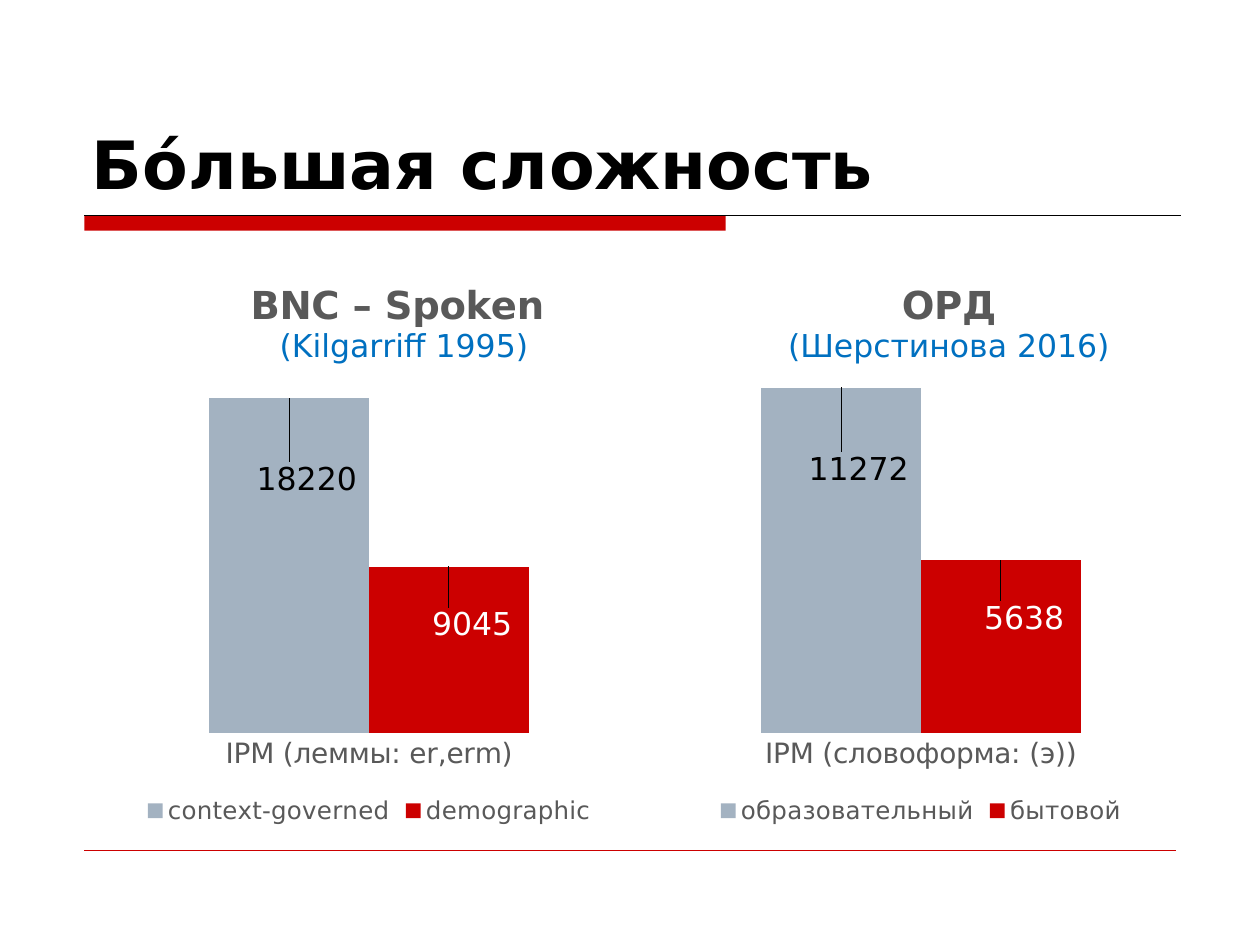
from lxml.etree import SubElement
from pptx import Presentation
from pptx.chart.data import CategoryChartData
from pptx.dml.color import RGBColor
from pptx.enum.chart import (XL_CHART_TYPE, XL_LABEL_POSITION,
                             XL_LEGEND_POSITION, XL_TICK_MARK)
from pptx.enum.shapes import MSO_CONNECTOR, MSO_SHAPE
from pptx.enum.text import MSO_ANCHOR, PP_ALIGN
from pptx.oxml import parse_xml
from pptx.oxml.ns import nsdecls, qn
from pptx.util import Inches, Pt

FONT = "DejaVu Sans"
RED, GREY_BLUE, GREY, BLUE = "CC0000", "A3B2C1", "595959", "0070C0"
BLACK, WHITE = "000000", "FFFFFF"


def color(hex_value):
    return RGBColor.from_string(hex_value)


def set_font(font, size, hex_value, bold=False):
    font.name = FONT
    font.size = Pt(size)
    font.bold = bold
    font.color.rgb = color(hex_value)


def set_layout(parent, index, **values):
    """Give a chart part a manual layout, in fractions of the chart."""
    for old in parent.findall(qn("c:layout")):
        parent.remove(old)
    settings = "".join(f'<c:{key} val="{value}"/>' for key, value in values.items())
    parent.insert(index, parse_xml(
        f'<c:layout {nsdecls("c")}><c:manualLayout>{settings}'
        "</c:manualLayout></c:layout>"))


def add_title(slide, text):
    title = slide.shapes.title
    title.left, title.top = Inches(0.63), Inches(0.33)
    title.width, title.height = Inches(8.75), Inches(1.33)
    frame = title.text_frame
    frame.text = text
    frame.vertical_anchor = MSO_ANCHOR.BOTTOM
    frame.paragraphs[0].alignment = PP_ALIGN.LEFT
    set_font(frame.paragraphs[0].runs[0].font, 38, BLACK, bold=True)


def add_rule(slide, y, right, width, hex_value):
    rule = slide.shapes.add_connector(
        MSO_CONNECTOR.STRAIGHT, Inches(0.67), Inches(y), Inches(right), Inches(y))
    rule.line.width = Pt(width)
    rule.line.color.rgb = color(hex_value)
    SubElement(rule._element.spPr, qn("a:effectLst"))


def add_accent_bar(slide):
    bar = slide.shapes.add_shape(
        MSO_SHAPE.RECTANGLE, Inches(0.67), Inches(1.71), Inches(5.09), Inches(0.12))
    bar.shadow.inherit = False
    bar.fill.solid()
    bar.fill.fore_color.rgb = color(RED)
    bar.line.fill.background()


def add_heading(chart, corpus, citation, x):
    frame = chart.chart_title.text_frame
    frame.text = f"{corpus}\n{citation}"
    heading, source = frame.paragraphs
    set_font(heading.runs[0].font, 22, GREY, bold=True)
    set_font(source.runs[0].font, 18, BLUE)
    chart.chart_title.include_in_layout = False
    set_layout(chart.chart_title._element, 1,
               xMode="edge", yMode="edge", x=x, y=0.06)


def style_series(series, fill, label_color, dx, dy):
    series.format.fill.solid()
    series.format.fill.fore_color.rgb = color(fill)
    label = series.points[0].data_label
    set_font(label.font, 18, label_color)
    label.position = XL_LABEL_POSITION.INSIDE_END
    set_layout(series._element.xpath(".//c:dLbl")[0], 1, x=dx, y=dy)


def style_axes(chart, maximum):
    values = chart.value_axis
    values.minimum_scale, values.maximum_scale = 0, maximum
    values.has_major_gridlines = False
    values.visible = False
    categories = chart.category_axis
    categories.major_tick_mark = XL_TICK_MARK.NONE
    categories.format.line.fill.background()
    set_font(categories.tick_labels.font, 16, GREY)


def add_corpus_chart(slide, left, corpus, citation, heading_x, category,
                     frequencies, maximum):
    data = CategoryChartData()
    data.categories = [category]
    for name, frequency in frequencies.items():
        data.add_series(name, [frequency])
    chart = slide.shapes.add_chart(
        XL_CHART_TYPE.COLUMN_CLUSTERED, Inches(left), Inches(1.92),
        Inches(4.62), Inches(4.67), data).chart
    set_font(chart.font, 10, BLACK)
    add_heading(chart, corpus, citation, heading_x)
    style_axes(chart, maximum)

    plot = chart.plots[0]
    plot.gap_width = 150
    plot.overlap = 0
    plot.vary_by_categories = False
    formal, everyday = plot.series
    style_series(formal, GREY_BLUE, BLACK, 0.03, 0.1)
    style_series(everyday, RED, WHITE, 0.04, 0.06)
    set_layout(chart._chartSpace.chart.plotArea, 0, layoutTarget="inner",
               xMode="edge", yMode="edge", x=0.02, y=0.21, w=0.96, h=0.625)

    chart.has_legend = True
    chart.legend.position = XL_LEGEND_POSITION.BOTTOM
    chart.legend.include_in_layout = False
    set_font(chart.legend.font, 14, GREY)


def main():
    presentation = Presentation()
    presentation.slide_width, presentation.slide_height = Inches(10), Inches(7.5)
    slide = presentation.slides.add_slide(presentation.slide_layouts[5])
    add_accent_bar(slide)
    add_rule(slide, 1.71, 9.37, 0.75, BLACK)
    add_rule(slide, 6.75, 9.33, 0.25, RED)
    add_title(slide, "Бо́льшая сложность")
    add_corpus_chart(slide, 0.62, "BNC – Spoken ", "(Kilgarriff 1995)", 0.29,
                     "IPM (леммы: er,erm)",
                     {"context-governed": 18220, "demographic": 9045}, 20000)
    add_corpus_chart(slide, 5, "ОРД", "(Шерстинова 2016)", 0.265,
                     "IPM (словоформа: (э))",
                     {"образовательный": 11272, "бытовой": 5638}, 12000)
    presentation.save("out.pptx")


if __name__ == "__main__":
    main()
